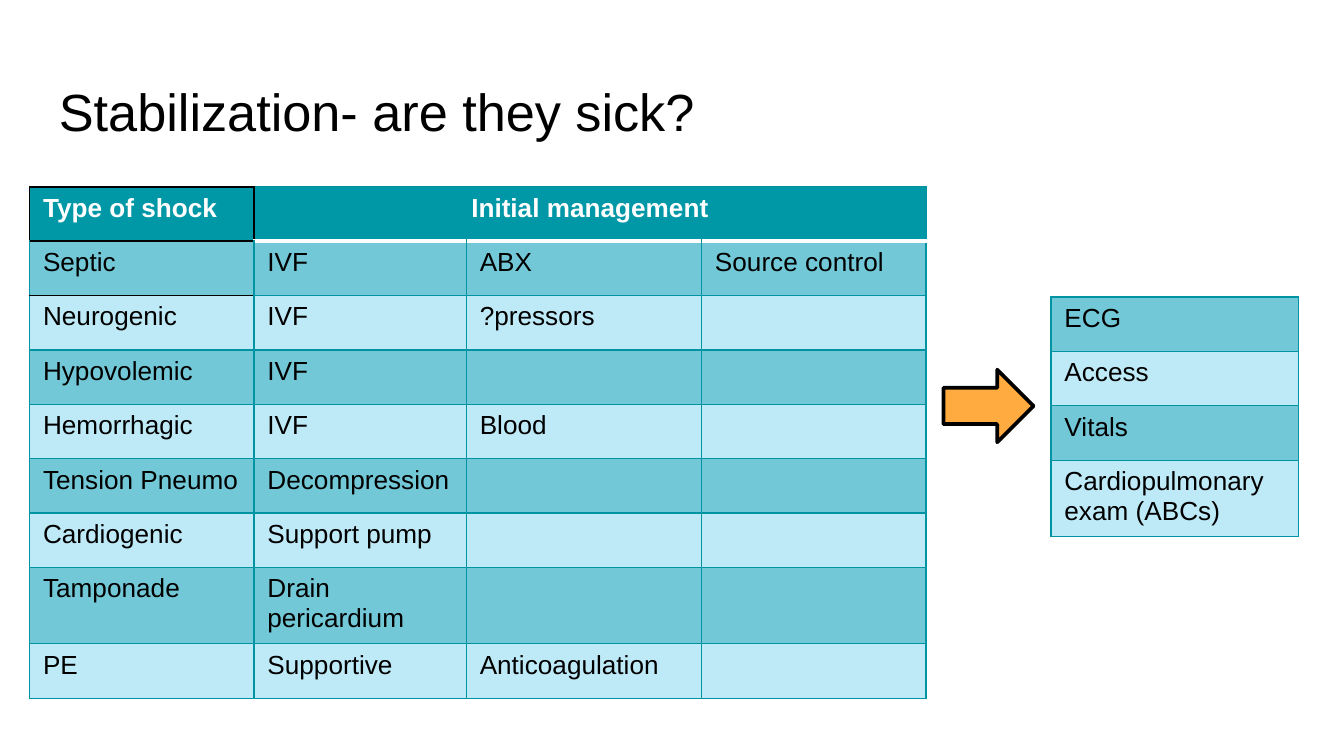
from lxml.etree import SubElement, Element
from pptx import Presentation
from pptx.dml.color import RGBColor as RGB
from pptx.enum.shapes import MSO_SHAPE as SHAPE
from pptx.enum.text import MSO_ANCHOR as ANCHOR, PP_ALIGN as ALIGN
from pptx.oxml.ns import qn
from pptx.util import Inches, Pt

W = 10
H = W * 9 / 16
ROW = 7.2
COLORS = {
    "head": "0097A7", "dark": "72C8D7", "light": "BEE9F7", "grid": "0094A3",
    "black": "000000", "white": "FFFFFF", "arrow": "FFAB40",
}
SHOCK = [
    ["Type of shock", "Initial management", "", ""],
    ["Septic", "IVF", "ABX", "Source control"],
    ["Neurogenic", "IVF", "?pressors", ""],
    ["Hypovolemic", "IVF", "", ""],
    ["Hemorrhagic", "IVF", "Blood", ""],
    ["Tension Pneumo", "Decompression", "", ""],
    ["Cardiogenic", "Support pump", "", ""],
    ["Tamponade", "Drain pericardium", "", ""],
    ["PE", "Supportive", "Anticoagulation", ""],
]
CHECKS = [["ECG"], ["Access"], ["Vitals"], ["Cardiopulmonary exam (ABCs)"]]


def rgb(name):
    """Return the named colour."""
    return RGB.from_string(COLORS[name])


def across(share):
    """Turn a percentage of the slide's width into a length."""
    return Inches(share * W / 100)


def down(share):
    """Turn a percentage of the slide's height into a length."""
    return Inches(share * H / 100)


def box(x, y, w, h):
    """Turn percentages of the slide's size into a place and a size."""
    return across(x), down(y), across(w), down(h)


def write(tf, text, size=14, color="black", bold=False, align=ALIGN.LEFT):
    """Put one formatted paragraph into a text frame."""
    p = tf.paragraphs[0]
    p.alignment = align
    if text:
        r = p.add_run()
        r.text = text
        r.font.name, r.font.size, r.font.bold = "Arial", Pt(size), bold
        r.font.color.rgb = rgb(color)
    SubElement(p._p, qn("a:endParaRPr"), sz=str(size * 100))


def border(cell, **sides):
    """Set cell borders given as side=(colour, points)."""
    tc_pr = cell._tc.get_or_add_tcPr()
    for i, side in enumerate("LRTB"):
        tag = qn(f"a:ln{side}")
        old = tc_pr.find(tag)
        if side in sides:
            color, width = sides[side]
            ln = Element(tag, w=str(Pt(width)))
            fill = SubElement(ln, qn("a:solidFill"))
            SubElement(fill, qn("a:srgbClr"), val=COLORS[color])
            if old is not None:
                tc_pr.remove(old)
            tc_pr.insert(i, ln)


def add_title(s, text):
    """Add the slide title."""
    tf = s.shapes.add_textbox(*box(3.4, 8.7, 93.2, 11.2)).text_frame
    tf.word_wrap, tf.vertical_anchor = True, ANCHOR.TOP
    tf.margin_left = tf.margin_right = tf.margin_top = tf.margin_bottom = Inches(0.1)
    write(tf, text, size=28)


def add_table(s, x, y, widths, data, header=False):
    """Add a banded table with an optional header row."""
    size = box(x, y, sum(widths), ROW * len(data))
    table = s.shapes.add_table(len(data), len(widths), *size).table
    for col, width in zip(table.columns, widths):
        col.width = across(width)
    for i, texts in enumerate(data):
        table.rows[i].height = down(ROW)
        head = header and i == 0
        band = "head" if head else ("dark", "light")[(i - header) % 2]
        for j, text in enumerate(texts):
            cell = table.cell(i, j)
            cell.fill.solid()
            cell.fill.fore_color.rgb = rgb(band)
            border(cell, **dict.fromkeys("LRTB", ("grid", 0.75)))
            write(cell.text_frame, text, color="white" if head else "black", bold=head,
                  align=ALIGN.CENTER if head and j else ALIGN.LEFT)
    return table


def style_header(table):
    """Merge the management heading and draw the heavier header lines."""
    black, white = ("black", 1), ("white", 2)
    table.cell(0, 1).merge(table.cell(0, 3))
    for j in range(1, 4):
        border(table.cell(0, j), B=white)
        border(table.cell(1, j), T=white)
    border(table.cell(0, 0), **dict.fromkeys("LRTB", black))
    border(table.cell(0, 1), L=black)
    border(table.cell(1, 0), T=black, B=black)
    border(table.cell(2, 0), T=black)


def add_arrow(s):
    """Add the outlined arrow between the tables."""
    sp = s.shapes.add_shape(SHAPE.RIGHT_ARROW, *box(70.2, 48.9, 6.7, 9.6))
    sp.shadow.inherit = False
    sp.fill.solid()
    sp.fill.fore_color.rgb = rgb("arrow")
    sp.line.color.rgb = rgb("black")
    sp.line.width = Pt(2)


def main():
    """Build and save the slide."""
    prs = Presentation()
    prs.slide_width, prs.slide_height = Inches(W), Inches(H)
    s = prs.slides.add_slide(prs.slide_layouts[6])
    add_title(s, "Stabilization- are they sick?")
    widths = [16.7, 15.8, 17.5, 16.7]
    style_header(add_table(s, 2.2, 24.7, widths, SHOCK, header=True))
    add_arrow(s)
    add_table(s, 78.2, 39.3, [18.4], CHECKS)
    prs.save("out.pptx")


if __name__ == "__main__":
    main()
